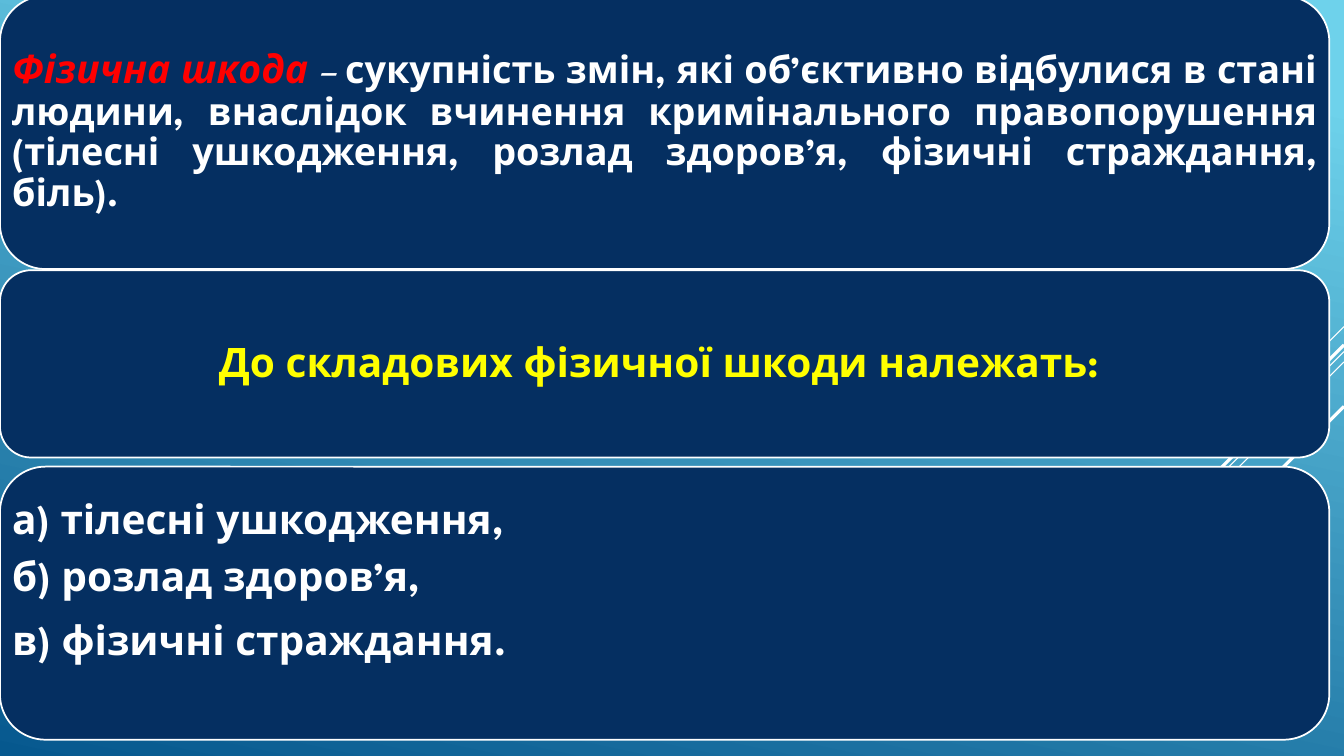
from lxml.etree import SubElement
from pptx import Presentation
from pptx.dml.color import RGBColor
from pptx.enum.shapes import MSO_CONNECTOR, MSO_SHAPE
from pptx.enum.text import MSO_ANCHOR, PP_ALIGN
from pptx.oxml.ns import qn
from pptx.util import Cm, Pt

WHITE = RGBColor(0xFF, 0xFF, 0xFF)
NAVY = RGBColor(0x05, 0x2F, 0x61)
RED = RGBColor(0xFF, 0x00, 0x00)
YELLOW = RGBColor(0xFF, 0xFF, 0x00)
SKY = RGBColor(0x6E, 0xD2, 0xEB)
OCEAN = RGBColor(0x06, 0x58, 0x8E)

FONT = "League Spartan"
SLIDE_W, SLIDE_H = 33.87, 19.05
PANEL_W = 33.5
INSET = 0.3
SIDE_INSET = -0.03  # the rounded corners already inset the text


def set_background(slide):
    fill = slide.background.fill
    fill.gradient()
    fill.gradient_angle = 258
    for stop, pos, color in zip(fill.gradient_stops, (0.1, 1), (SKY, OCEAN)):
        stop.position = pos
        stop.color.rgb = color


def add_ray(slide, top, run, width):
    """Diagonal line going down and left from the right slide edge."""
    line = slide.shapes.add_connector(
        MSO_CONNECTOR.STRAIGHT,
        Cm(SLIDE_W), Cm(top), Cm(SLIDE_W - run), Cm(top + run))
    line.line.color.rgb = WHITE
    line.line.width = Pt(width)
    SubElement(line.element.spPr, qn("a:effectLst"))


def add_panel(slide, top, height, bottom_inset=INSET):
    sp = slide.shapes.add_shape(
        MSO_SHAPE.ROUNDED_RECTANGLE, 0, Cm(top), Cm(PANEL_W), Cm(height))
    sp.shadow.inherit = False
    sp.fill.solid()
    sp.fill.fore_color.rgb = NAVY
    sp.line.color.rgb = WHITE
    sp.line.width = Pt(1.25)
    tf = sp.text_frame
    tf.word_wrap = True
    tf.vertical_anchor = MSO_ANCHOR.MIDDLE
    tf.margin_left = tf.margin_right = Cm(SIDE_INSET)
    tf.margin_top = Cm(INSET)
    tf.margin_bottom = Cm(bottom_inset)
    return tf


def format_paragraph(p, align=PP_ALIGN.LEFT, spacing=0.9, after=10):
    p.alignment = align
    p.line_spacing = spacing
    p.space_after = Pt(after)


def add_text(p, text, size=29, color=WHITE, bold=True, italic=False):
    r = p.add_run()
    r.text = text
    font = r.font
    font.name = FONT
    font.size = Pt(size)
    font.color.rgb = color
    font.bold = bold
    font.italic = italic


def main():
    prs = Presentation()
    prs.slide_width, prs.slide_height = Cm(SLIDE_W), Cm(SLIDE_H)
    slide = prs.slides.add_slide(prs.slide_layouts[6])

    # Background with diagonal rays
    set_background(slide)
    for top, run, width in ((8.23, 2.54, 0.75), (8.86, 8.28, 0.75),
                            (9.12, 5.26, 0.75), (8.69, 4.85, 2.25),
                            (10.24, 3.53, 2.25)):
        add_ray(slide, top, run, width)

    # Definition
    p = add_panel(slide, -0.1, 6.88).paragraphs[0]
    format_paragraph(p, align=PP_ALIGN.JUSTIFY)
    add_text(p, "Фізична шкода ", size=28, color=RED, italic=True)
    add_text(p, "– ", size=27, bold=False, italic=True)
    add_text(p, "сукупність змін, які об’єктивно відбулися в стані людини, "
                "внаслідок вчинення кримінального правопорушення (тілесні "
                "ушкодження, розлад здоров’я, фізичні страждання, біль).",
             size=27)

    # Heading of the list
    p = add_panel(slide, 6.81, 4.72).paragraphs[0]
    format_paragraph(p, align=PP_ALIGN.CENTER)
    add_text(p, "До складових фізичної шкоди належать: ", color=YELLOW)

    # Components of physical harm
    tf = add_panel(slide, 11.76, 6.88, bottom_inset=1.41)
    items = (("а) тілесні ушкодження,", 0.9, 10),
             ("б) розлад здоров’я,", 0.9, 10),
             ("в) фізичні страждання.", 1.0, 0))
    for i, (text, spacing, after) in enumerate(items):
        p = tf.add_paragraph() if i else tf.paragraphs[0]
        format_paragraph(p, spacing=spacing, after=after)
        add_text(p, text)

    prs.save("out.pptx")


if __name__ == "__main__":
    main()
